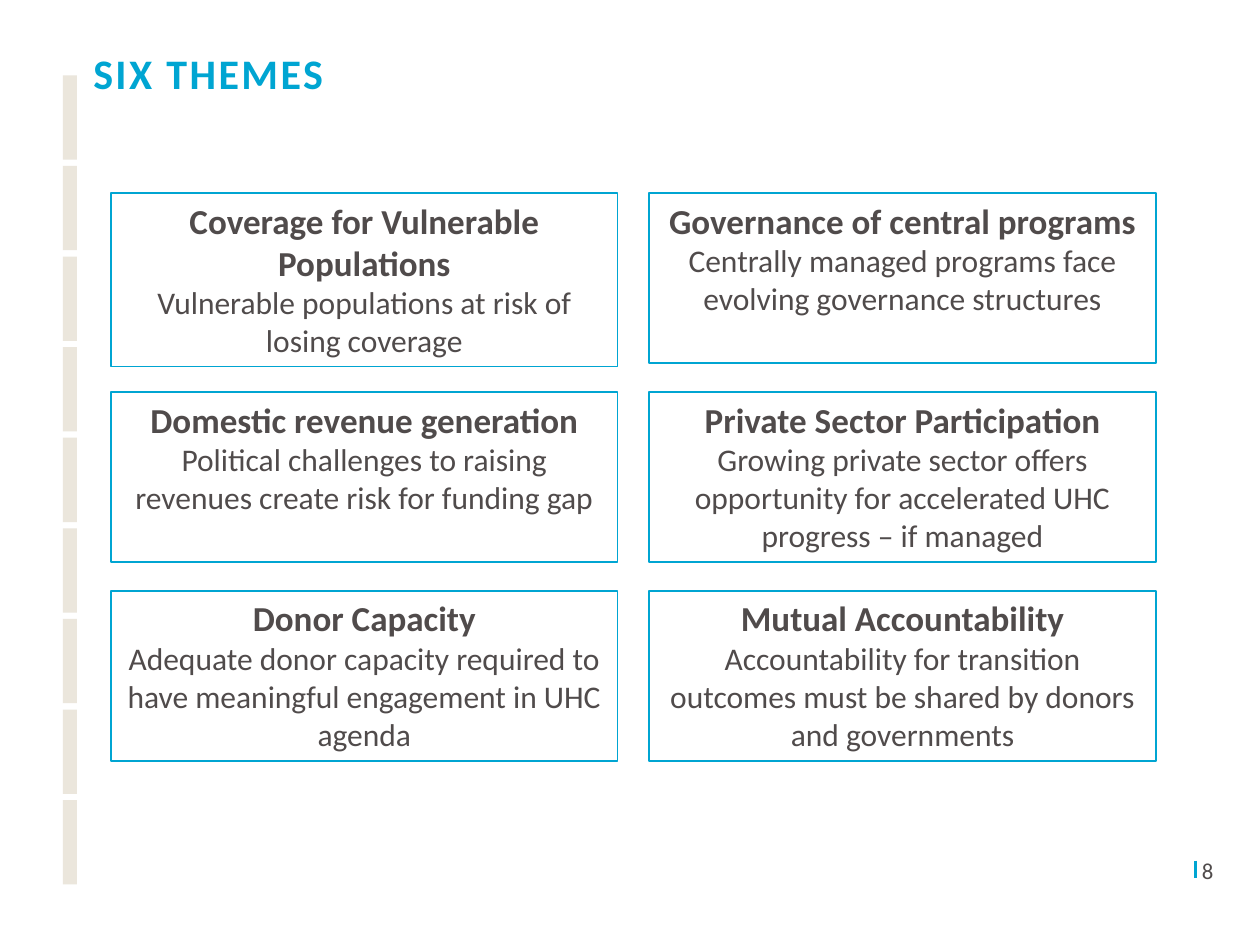
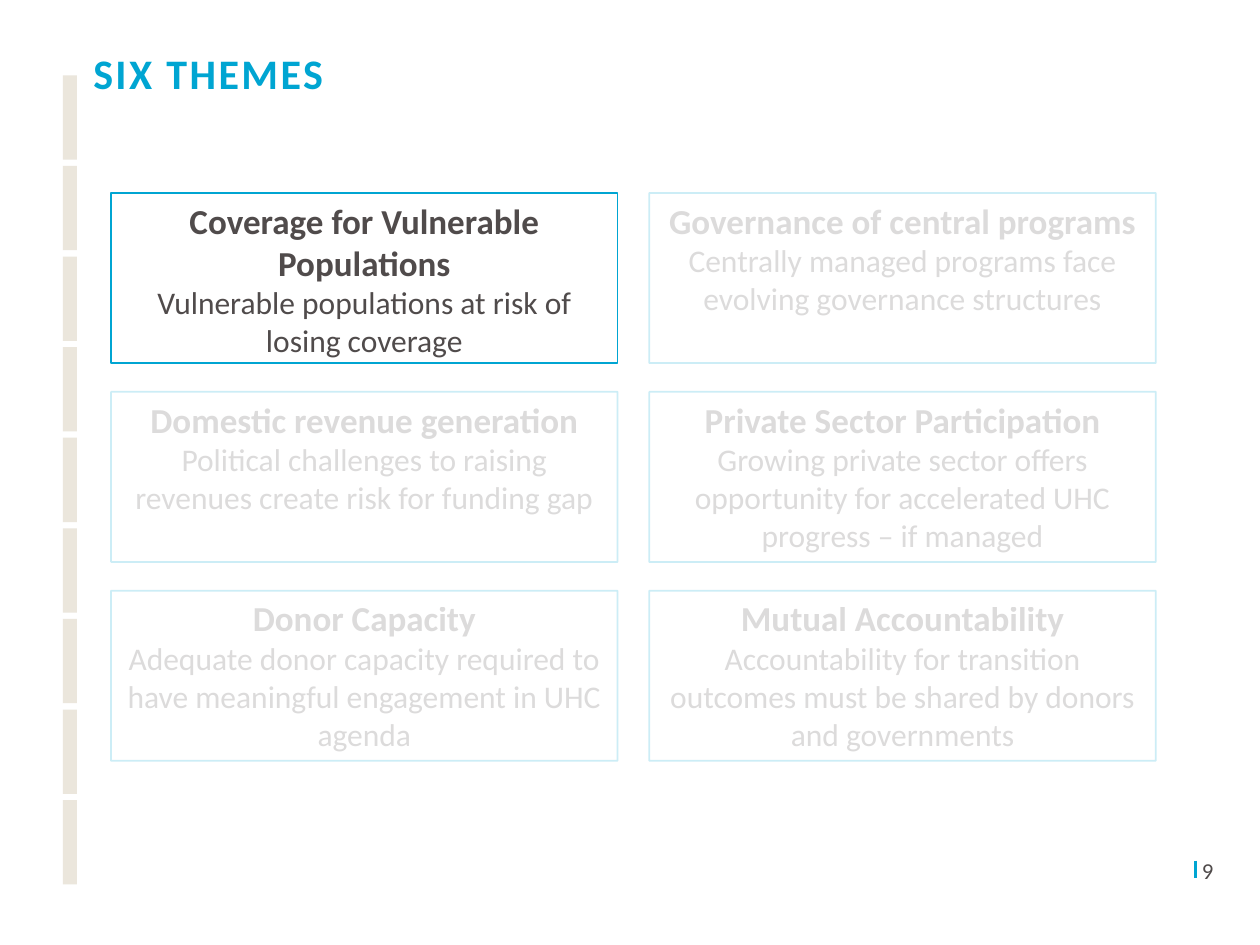
from lxml.etree import SubElement
from pptx import Presentation
from pptx.dml.color import RGBColor
from pptx.enum.shapes import MSO_CONNECTOR, MSO_SHAPE
from pptx.enum.text import MSO_ANCHOR, MSO_AUTO_SIZE, PP_ALIGN
from pptx.oxml.ns import qn
from pptx.util import Cm, Pt

BLUE = RGBColor(0x00, 0xA5, 0xD2)
GREY = RGBColor(0x50, 0x4B, 0x4B)
SAND = RGBColor(0xEB, 0xE6, 0xDC)
FONT = "Calibri"

BAR_COUNT = 9
BAR_TOP, LAST_BAR_TOP = 1.52, 16.13
BAR_PITCH = (LAST_BAR_TOP - BAR_TOP) / (BAR_COUNT - 1)
BOX_LEFT, BOX_TOP = 2.24, 3.89
BOX_WIDTH, BOX_HEIGHT = 10.21, 3.43
COLUMN_PITCH, ROW_PITCH = 10.85, 4.01
FADED_ALPHA = "20000"

THEMES = [
    ("Coverage for Vulnerable Populations",
     "Vulnerable populations at risk of losing coverage"),
    ("Governance of central programs",
     "Centrally managed programs face evolving governance structures"),
    ("Domestic revenue generation",
     "Political challenges to raising revenues create risk for funding gap"),
    ("Private Sector Participation",
     "Growing private sector offers opportunity for accelerated UHC progress – if managed"),
    ("Donor Capacity",
     "Adequate donor capacity required to have meaningful engagement in UHC agenda"),
    ("Mutual Accountability",
     "Accountability for transition outcomes must be shared by donors and governments"),
]
SLIDES = [
    {"number": 8, "active": range(len(THEMES)), "first_height": 3.5},
    {"number": 9, "active": [0], "first_height": BOX_HEIGHT},
]


def add_span(para, text, size, color, bold=False):
    span = para.add_run()
    span.text = text
    span.font.name = FONT
    span.font.size = Pt(size)
    span.font.bold = bold
    span.font.color.rgb = color
    return span


deck = Presentation()
deck.slide_width = Cm(25.4)
deck.slide_height = Cm(19.05)

for slide in SLIDES:
    page = deck.slides.add_slide(deck.slide_layouts[5])

    bars = page.shapes.add_group_shape()
    for index in range(BAR_COUNT):
        bar = bars.shapes.add_shape(
            MSO_SHAPE.RECTANGLE,
            Cm(1.27), Cm(BAR_TOP + index * BAR_PITCH), Cm(0.28), Cm(1.7))
        bar.shadow.inherit = False
        bar.fill.solid()
        bar.fill.fore_color.rgb = SAND
        bar.line.fill.background()

    tick = page.shapes.add_connector(
        MSO_CONNECTOR.STRAIGHT, Cm(24.1), Cm(17.35), Cm(24.1), Cm(17.7))
    tick.line.color.rgb = BLUE
    tick.line.width = Pt(2.15)
    SubElement(tick.element.spPr, qn("a:effectLst"))

    number_box = page.shapes.add_textbox(Cm(24.23), Cm(17.12), Cm(0.71), Cm(0.71))
    frame = number_box.text_frame
    frame.word_wrap = True
    frame.vertical_anchor = MSO_ANCHOR.BOTTOM
    frame.margin_left = frame.margin_right = frame.margin_top = frame.margin_bottom = 0
    add_span(frame.paragraphs[0], str(slide["number"]), 13, GREY)

    title = page.shapes.title
    title.left, title.top, title.width, title.height = Cm(1.7), Cm(0.97), Cm(21.92), Cm(3.68)
    frame = title.text_frame
    frame.auto_size = MSO_AUTO_SIZE.NONE
    frame.vertical_anchor = MSO_ANCHOR.TOP
    frame.margin_left = frame.margin_right = Cm(0.18)
    frame.margin_top = frame.margin_bottom = Cm(0.1)
    para = frame.paragraphs[0]
    para.alignment = PP_ALIGN.LEFT
    para.line_spacing = 0.9
    span = add_span(para, "SIX THEMES", 24, BLUE, True)
    span.font._element.set("spc", "140")

    for index, (heading, detail) in enumerate(THEMES):
        row, column = divmod(index, 2)
        height = BOX_HEIGHT if index else slide["first_height"]
        box = page.shapes.add_shape(
            MSO_SHAPE.RECTANGLE,
            Cm(BOX_LEFT + column * COLUMN_PITCH), Cm(BOX_TOP + row * ROW_PITCH),
            Cm(BOX_WIDTH), Cm(height))
        box.shadow.inherit = False
        box.fill.background()
        box.line.color.rgb = BLUE
        box.line.width = Pt(1)
        frame = box.text_frame
        frame.word_wrap = True
        frame.vertical_anchor = MSO_ANCHOR.TOP
        para = frame.paragraphs[0]
        para.alignment = PP_ALIGN.CENTER
        add_span(para, heading, 20, GREY, True)
        para = frame.add_paragraph()
        para.alignment = PP_ALIGN.CENTER
        add_span(para, detail, 18, GREY)
        if index not in slide["active"]:
            for color in box.element.iter(qn("a:srgbClr")):
                SubElement(color, qn("a:alpha"), val=FADED_ALPHA)

deck.save("out.pptx")
